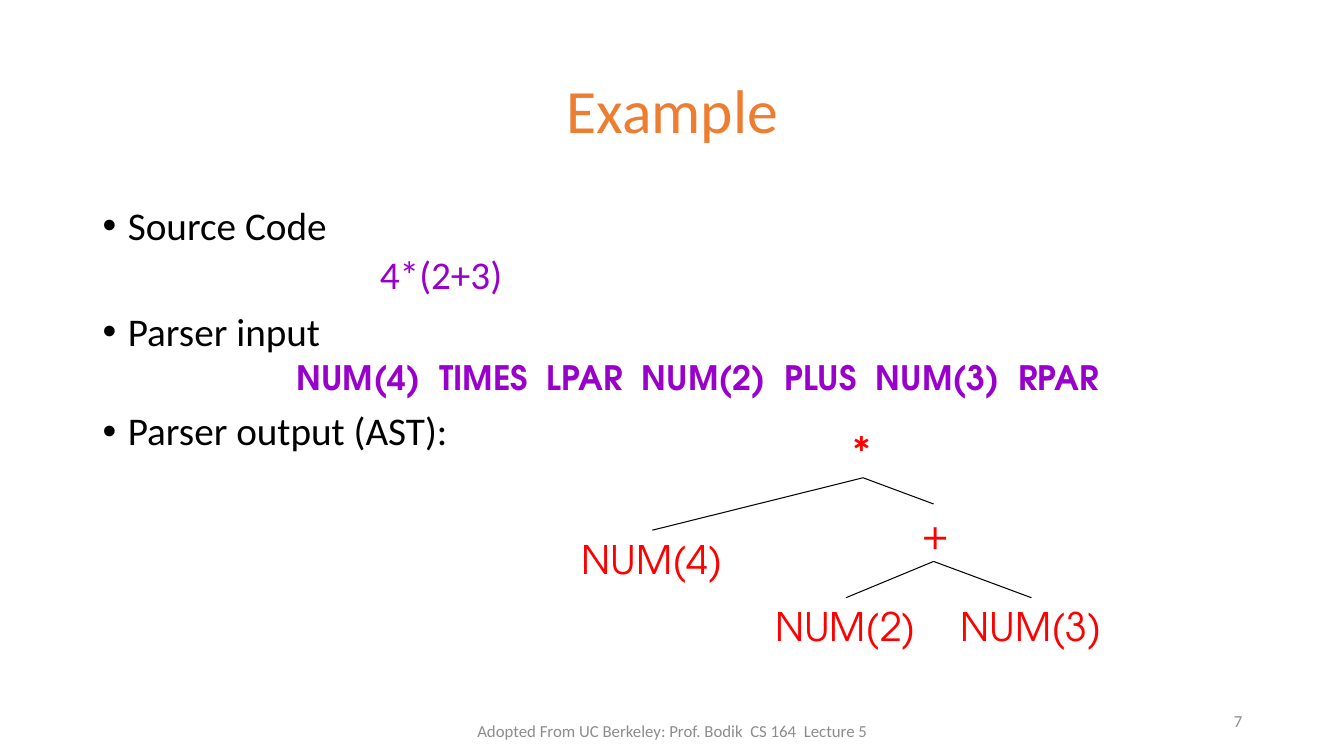
from lxml import etree
from pptx import Presentation
from pptx.dml.color import RGBColor
from pptx.enum.shapes import MSO_CONNECTOR
from pptx.enum.text import MSO_ANCHOR, PP_ALIGN
from pptx.oxml.ns import qn
from pptx.util import Inches, Pt

ORANGE = RGBColor(0xED, 0x7D, 0x31)
PURPLE = RGBColor(0x99, 0x00, 0xCC)
RED = RGBColor(0xFF, 0x00, 0x00)
GREY = RGBColor(0x8C, 0x8C, 0x8C)
BLACK = RGBColor(0x00, 0x00, 0x00)
SANS, GEOMETRIC = "Calibri", "TeX Gyre Adventor"


def add_box(page, left, top, width, height, anchor=MSO_ANCHOR.TOP, wrap=True):
    box = page.shapes.add_textbox(Inches(left), Inches(top), Inches(width), Inches(height))
    box.text_frame.word_wrap = wrap
    box.text_frame.vertical_anchor = anchor
    return box.text_frame


def write(para, text, font, size, color, align=PP_ALIGN.LEFT, bold=False):
    para.alignment = align
    span = para.add_run()
    span.text = text
    for name, value in {"name": font, "size": Pt(size), "bold": bold}.items():
        setattr(span.font, name, value)
    span.font.color.rgb = color


deck = Presentation()
deck.slide_width, deck.slide_height = Inches(13.33), Inches(7.5)
page = deck.slides.add_slide(deck.slide_layouts[6])

# Title, footer and slide number
single_lines = [
    ("Example", (0.92, 0.4, 11.5, 1.45), 44, ORANGE, PP_ALIGN.CENTER),
    ("Adopted From UC Berkeley: Prof. Bodik  CS 164  Lecture 5",
     (4.42, 7.05, 4.5, 0.4), 12, GREY, PP_ALIGN.CENTER),
    ("7", (9.42, 6.95, 3, 0.4), 12, GREY, PP_ALIGN.RIGHT),
]
for text, place, size, color, align in single_lines:
    para = add_box(page, *place, anchor=MSO_ANCHOR.MIDDLE).paragraphs[0]
    para.line_spacing = 0.9 if size == 44 else 1.0
    write(para, text, SANS, size, color, align)

# Body: bulleted headings, each with an indented example below
body = add_box(page, 0.92, 2, 11.5, 4.76)
body_lines = [
    ("Source Code", SANS, 28, None, PP_ALIGN.LEFT),
    ("4*(2+3)", SANS, 28, 2.75, PP_ALIGN.LEFT),
    ("Parser input", SANS, 28, None, PP_ALIGN.LEFT),
    ("NUM(4)  TIMES  LPAR  NUM(2)  PLUS  NUM(3)  RPAR", GEOMETRIC, 24, 0.5, PP_ALIGN.CENTER),
    ("Parser output (AST):", SANS, 28, None, PP_ALIGN.LEFT),
]
for index, (text, font, size, indent, align) in enumerate(body_lines):
    is_heading = indent is None
    para = body.add_paragraph() if index else body.paragraphs[0]
    para.line_spacing = 0.9
    if index:
        para.space_before = Pt(10 if is_heading else 5)
    properties = para._p.get_or_add_pPr()
    properties.set("marL", str(Inches(0.25 if is_heading else indent)))
    properties.set("indent", str(Inches(-0.25 if is_heading else 0)))
    if is_heading:
        etree.SubElement(properties, qn("a:buFont"), typeface="Arial")
        etree.SubElement(properties, qn("a:buChar"), char="•")
    write(para, text, font, size, BLACK if is_heading else PURPLE, align,
          bold=font == GEOMETRIC)

# Syntax tree
NODE_HEIGHT = 0.57
tree_nodes = [
    ("*", 8.37, 4.18, 0.37),
    ("NUM(4)", 5.67, 5.26, 1.61),
    ("+", 9.04, 5, 0.44),
    ("NUM(2)", 7.59, 5.93, 1.61),
    ("NUM(3)", 9.43, 5.93, 1.61),
]
for text, left, top, width in tree_nodes:
    node = add_box(page, left, top, width, NODE_HEIGHT, wrap=False)
    write(node.paragraphs[0], text, GEOMETRIC, 28, RED)

TIMES_FOOT, PLUS_FOOT = (8.56, 4.74), (9.26, 5.57)
tree_edges = [
    (TIMES_FOOT, (6.47, 5.26)),
    (TIMES_FOOT, (9.26, 5)),
    (PLUS_FOOT, (8.39, 5.93)),
    (PLUS_FOOT, (10.23, 5.93)),
]
for start, end in tree_edges:
    edge = page.shapes.add_connector(
        MSO_CONNECTOR.STRAIGHT, *(Inches(value) for value in start + end))
    edge.line.color.rgb = BLACK
    edge.line.width = Pt(0.75)
    etree.SubElement(edge._element.spPr, qn("a:effectLst"))

deck.save("out.pptx")
